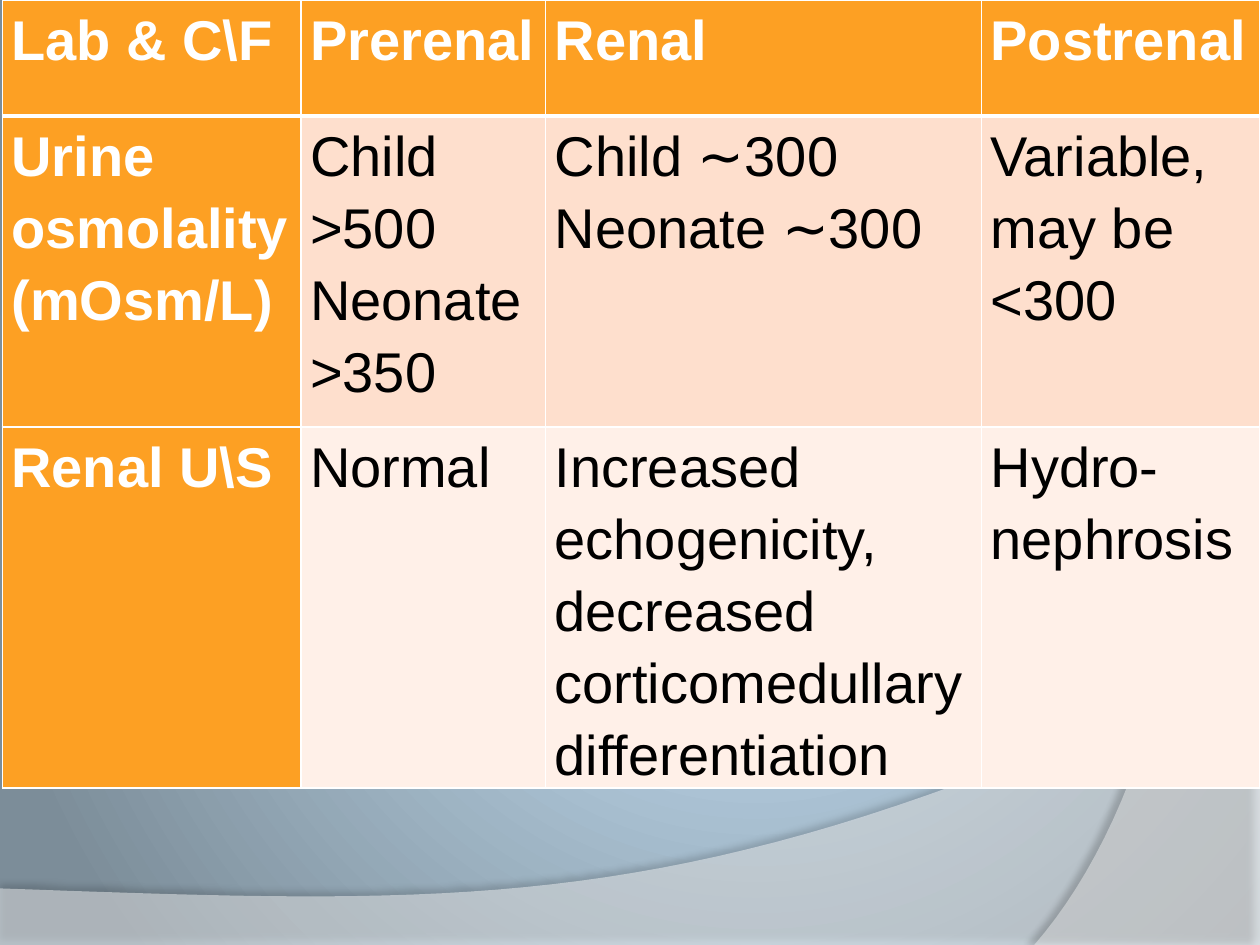
"""Build a slide with a table that tells three kinds of renal failure apart."""
import dataclasses

import pptx
import pptx.dml.color
import pptx.oxml
import pptx.oxml.ns
import pptx.util

Cm = pptx.util.Cm
Pt = pptx.util.Pt


@dataclasses.dataclass(frozen=True)
class Theme:
    """Hold the colours, the font and the type size."""
    glow: str = "CBE7FC"
    dusk: str = "7C8D99"
    head: str = "FDA023"
    bands: tuple = ("FEDFCD", "FFF0E8")
    white: str = "FFFFFF"
    black: str = "000000"
    font: str = "Arial"
    size: int = 32


THEME = Theme()
WIDE, HIGH = 25.4, 19.05
COLS = (6.02, 4.93, 8.79, 5.61)
ROWS = (2.34, 6.27, 6.27)
CELLS = (
    ("Lab & C\\F", "Prerenal", "Renal", "Postrenal"),
    ("Urine osmolality\n(mOsm/L)", "Child >500\nNeonate >350",
     "Child ∼300\nNeonate ∼300", "Variable, may be\n<300"),
    ("Renal U\\S", "Normal",
     "Increased echogenicity, decreased\ncorticomedullary differentiation",
     "Hydro-nephrosis"),
)


def rgb(code):
    """Turn a hex code into a colour."""
    return pptx.dml.color.RGBColor.from_string(code)


def make(xml):
    """Parse one drawing element from its XML."""
    tag, rest = xml[1:].split(" ", 1)
    return pptx.oxml.parse_xml(f"<{tag} {pptx.oxml.ns.nsdecls('a')} {rest}")


def paint_back(slide):
    """Fill the background with a round glow."""
    fill = slide.background.fill
    fill.gradient()
    for stop, code, place in zip(fill.gradient_stops, (THEME.glow, THEME.dusk), (0, 1)):
        stop.color.rgb = rgb(code)
        stop.position = place
    line = next(slide.element.iter(pptx.oxml.ns.qn("a:lin")))
    line.getparent().replace(line, make(
        '<a:path path="circle"><a:fillToRect l="60000" t="50000" r="40000" b="50000"/></a:path>'))


def curve(knots, steps=40):
    """List points along a cubic curve, given its four knots."""
    points = []
    for step in range(steps + 1):
        t = step / steps
        parts = ((1 - t) ** 3, 3 * t * (1 - t) ** 2, 3 * t * t * (1 - t), t ** 3)
        points.append(tuple(sum(p * k[axis] for p, k in zip(parts, knots)) for axis in (0, 1)))
    return points


def add_wave(slide, points, clear, shade, gap, turn):
    """Draw a clear white wave with a soft shadow."""
    points = [(Cm(x), Cm(y)) for x, y in points]
    pen = slide.shapes.build_freeform(*points[0])
    pen.add_line_segments(points[1:])
    wave = pen.convert_to_shape()
    wave.fill.solid()
    wave.fill.fore_color.rgb = rgb(THEME.white)
    wave.line.fill.background()
    props = wave.element.spPr
    tint = next(props.iter(pptx.oxml.ns.qn("a:srgbClr")))
    tint.append(make(f'<a:alpha val="{clear * 1000}"/>'))
    props.append(make(
        f'<a:effectLst ><a:outerShdw blurRad="{Pt(4)}" dist="{Pt(gap)}" dir="{turn * 60000}">'
        f'<a:srgbClr val="{THEME.black}"><a:alpha val="{shade * 1000}"/></a:srgbClr>'
        '</a:outerShdw></a:effectLst>'))


def write(frame, text, color, bold=False, space=1.15):
    """Write text, one paragraph to a line, in the given format."""
    frame.text = text
    for para in frame.paragraphs:
        para.line_spacing = space
        for run in para.runs:
            run.font.name = THEME.font
            run.font.size = Pt(THEME.size)
            run.font.bold = bold
            run.font.color.rgb = rgb(color)


def edge(cell, **widths):
    """Give a cell white borders, one width in points for each side."""
    props = cell._tc.get_or_add_tcPr()
    for place, (side, width) in enumerate(widths.items()):
        props.insert(place, make(
            f'<a:ln{side} w="{Pt(width)}"><a:solidFill><a:srgbClr val="{THEME.white}"/>'
            f'</a:solidFill></a:ln{side}>'))


def fill_cell(cell, text, row, col):
    """Write and format one cell by its place in the table."""
    head = row == 0 or col == 0
    cell.margin_left = cell.margin_right = Cm(0.18)
    cell.margin_top = cell.margin_bottom = 0
    write(cell.text_frame, text, THEME.white if head else THEME.black, bold=head)
    cell.fill.solid()
    cell.fill.fore_color.rgb = rgb(THEME.head if head else THEME.bands[row - 1])
    edge(cell, L=1, R=1, T=3 if row == 1 else 1, B=3 if row == 0 else 1)


def add_grid(slide):
    """Add the table and fill its cells."""
    grid = slide.shapes.add_table(
        len(ROWS), len(COLS), Cm(0.05), 0, Cm(sum(COLS)), Cm(sum(ROWS))).table
    for col, width in zip(grid.columns, COLS):
        col.width = Cm(width)
    for row, height in zip(grid.rows, ROWS):
        row.height = Cm(height)
    for row, texts in enumerate(CELLS):
        for col, text in enumerate(texts):
            fill_cell(grid.cell(row, col), text, row, col)


def main():
    """Build the slide and save it."""
    deck = pptx.Presentation()
    deck.slide_width, deck.slide_height = Cm(WIDE), Cm(HIGH)
    slide = deck.slides.add_slide(deck.slide_layouts[6])
    paint_back(slide)
    low = curve(((WIDE, 13.21), (14.2, 18.52), (9.93, 18.26), (0, 17.91)))
    add_wave(slide, [(0, HIGH), (WIDE, HIGH)] + low, clear=45, shade=35, gap=3.5, turn=270)
    side = curve(((20.85, HIGH), (23.75, 15.72), (25.86, 7.62), (20.32, 0)))
    add_wave(slide, [(WIDE, 0), (WIDE, HIGH)] + side, clear=40, shade=45, gap=4, turn=180)
    add_grid(slide)
    deck.save("out.pptx")


if __name__ == "__main__":
    main()
